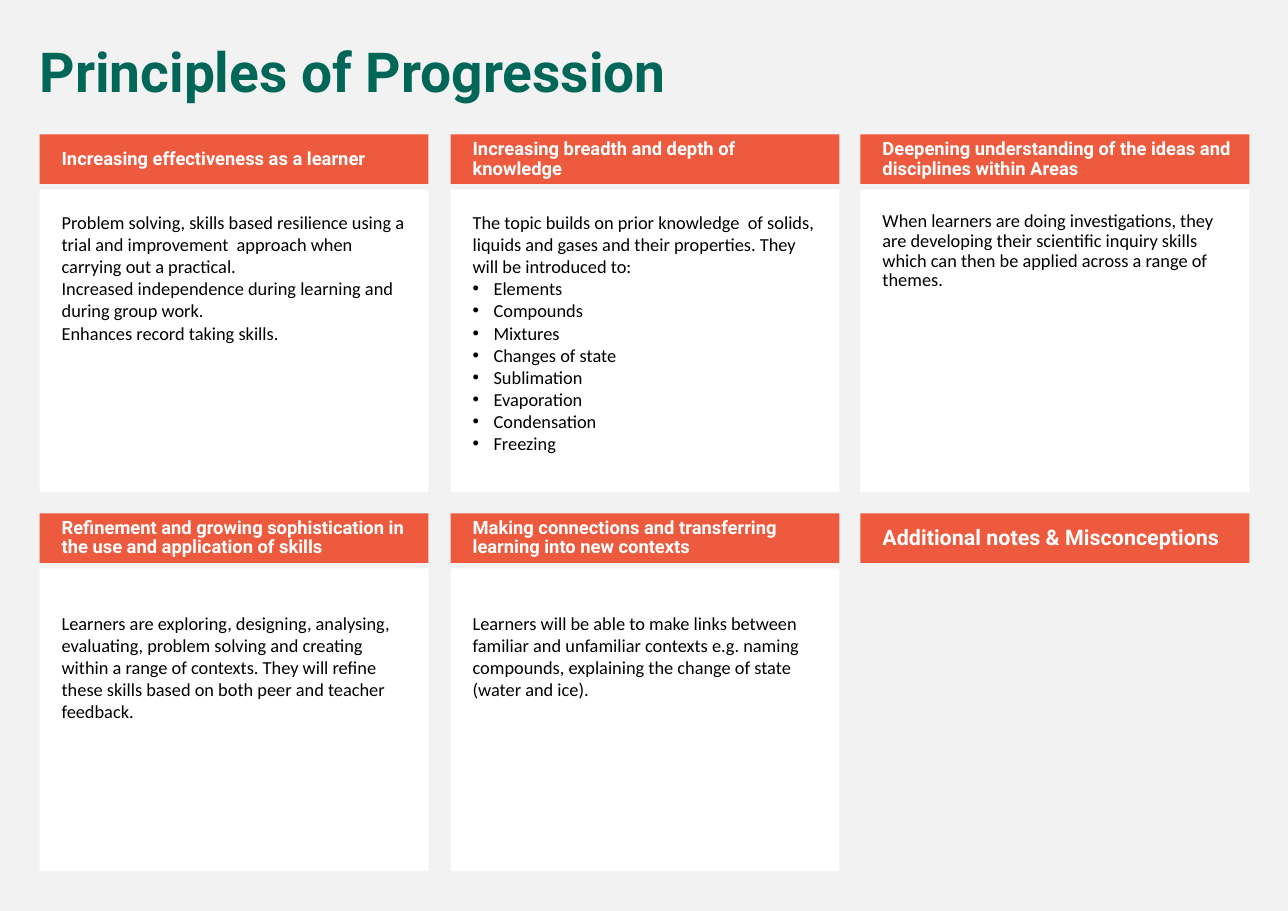
from lxml import etree
from pptx import Presentation
from pptx.dml.color import RGBColor
from pptx.enum.shapes import MSO_SHAPE
from pptx.enum.text import MSO_ANCHOR, MSO_AUTO_SIZE, PP_ALIGN
from pptx.oxml.ns import qn
from pptx.util import Inches, Pt

RECTANGLE = MSO_SHAPE.RECTANGLE
TOP, MIDDLE = MSO_ANCHOR.TOP, MSO_ANCHOR.MIDDLE
LEFT = PP_ALIGN.LEFT
NO_AUTOFIT = MSO_AUTO_SIZE.NONE

# Content: heading, paragraphs, bullets, format of the card
TITLE = "Principles of Progression"
CARDS = [
    {"heading": "Increasing effectiveness as a learner",
     "paragraphs": [
         "Problem solving, skills based resilience using a trial and improvement  approach "
         "when carrying out a practical.",
         "Increased independence during learning and during group work.",
         "Enhances record taking skills."]},
    {"heading": "Increasing breadth and depth of knowledge",
     "paragraphs": [
         "The topic builds on prior knowledge  of solids, liquids and gases and "
         "their properties. They will be introduced to:"],
     "bullets": ["Elements", "Compounds", "Mixtures", "Changes of state",
                 "Sublimation", "Evaporation", "Condensation", "Freezing"]},
    {"heading": "Deepening understanding of the ideas and disciplines within Areas",
     "paragraphs": [
         "When learners are doing investigations, they are developing their scientific "
         "inquiry skills which can then be applied across a range of themes."],
     "line_spacing": 0.9},
    {"heading": "Refinement and growing sophistication in the use and application of skills",
     "paragraphs": [
         "Learners are exploring, designing, analysing, evaluating, problem solving and "
         "creating within a range of contexts. They will refine these skills based on "
         "both peer and teacher feedback."],
     "top_inset": 0.4},
    {"heading": "Making connections and transferring learning into new contexts",
     "paragraphs": [
         "Learners will be able to make links between familiar and unfamiliar "
         "contexts e.g. naming compounds, explaining the change of state "
         "(water and ice)."],
     "top_inset": 0.4},
    {"heading": "Additional notes & Misconceptions", "heading_size": 14},
]

# Layout and colours
COLUMN_LEFTS = (0.36, 4.09, 7.81)
ROW_TOPS = (1.22, 4.66)
CARD_WIDTH, HEADING_HEIGHT, BODY_HEIGHT = 3.53, 0.45, 2.75
BODY_OFFSET = 0.5
BULLET_INDENT = 0.19
GREY, WHITE, BLACK, ORANGE, GREEN = "F2F2F2", "FFFFFF", "000000", "ED5A3E", "006758"


def color(hex_code):
    return RGBColor.from_string(hex_code)


def add_bullet(paragraph):
    properties = paragraph._p.get_or_add_pPr()
    properties.set("marL", str(Inches(BULLET_INDENT)))
    properties.set("indent", str(-Inches(BULLET_INDENT)))
    etree.SubElement(properties, qn("a:buFont")).set("typeface", "Arial")
    etree.SubElement(properties, qn("a:buChar")).set("char", "•")


def write_text(shape, paragraphs, bullets=(), size=12, font="Calibri", ink=BLACK,
               bold=False, line_spacing=1.0, anchor=TOP, insets=(0.2, 0.2, 0.2, 0.2)):
    frame = shape.text_frame
    frame.word_wrap = True
    frame.auto_size = NO_AUTOFIT
    frame.vertical_anchor = anchor
    (frame.margin_left, frame.margin_top,
     frame.margin_right, frame.margin_bottom) = map(Inches, insets)
    for index, text in enumerate([*paragraphs, *bullets]):
        paragraph = frame.add_paragraph() if index else frame.paragraphs[0]
        paragraph.alignment = LEFT
        paragraph.line_spacing = line_spacing
        if index >= len(paragraphs):
            add_bullet(paragraph)
        run = paragraph.add_run()
        run.text = text
        run.font.size = Pt(size)
        run.font.name = font
        run.font.bold = bold
        run.font.color.rgb = color(ink)


def add_panel(slide, left, top, height, fill):
    shape = slide.shapes.add_shape(RECTANGLE, Inches(left), Inches(top),
                                   Inches(CARD_WIDTH), Inches(height))
    shape.shadow.inherit = False
    shape.fill.solid()
    shape.fill.fore_color.rgb = color(fill)
    shape.line.fill.background()
    return shape


def add_card(slide, left, top, heading, paragraphs=(), bullets=(), heading_size=12,
             line_spacing=1.0, top_inset=0.2):
    if paragraphs:
        body = add_panel(slide, left, top + BODY_OFFSET, BODY_HEIGHT, WHITE)
        write_text(body, paragraphs, bullets, line_spacing=line_spacing,
                   insets=(0.2, top_inset, 0.2, 0.2))
    band = add_panel(slide, left, top, HEADING_HEIGHT, ORANGE)
    write_text(band, [heading], size=heading_size, font="Roboto", ink=WHITE, bold=True,
               line_spacing=0.9, anchor=MIDDLE, insets=(0.2, 0.05, 0.1, 0.05))


def main():
    presentation = Presentation()
    presentation.slide_width, presentation.slide_height = Inches(11.69), Inches(8.27)
    slide = presentation.slides.add_slide(presentation.slide_layouts[5])
    slide.background.fill.solid()
    slide.background.fill.fore_color.rgb = color(GREY)

    # Title
    title = slide.shapes.title
    title.left, title.top = Inches(0.26), Inches(0.36)
    title.width, title.height = Inches(11.08), Inches(0.65)
    write_text(title, [TITLE], size=36, font="Roboto", ink=GREEN, bold=True,
               line_spacing=0.9, insets=(0.1, 0.05, 0.1, 0.05))

    # Cards, row by row
    for index, card in enumerate(CARDS):
        row, column = divmod(index, len(COLUMN_LEFTS))
        add_card(slide, COLUMN_LEFTS[column], ROW_TOPS[row], **card)

    presentation.save("out.pptx")


if __name__ == "__main__":
    main()
